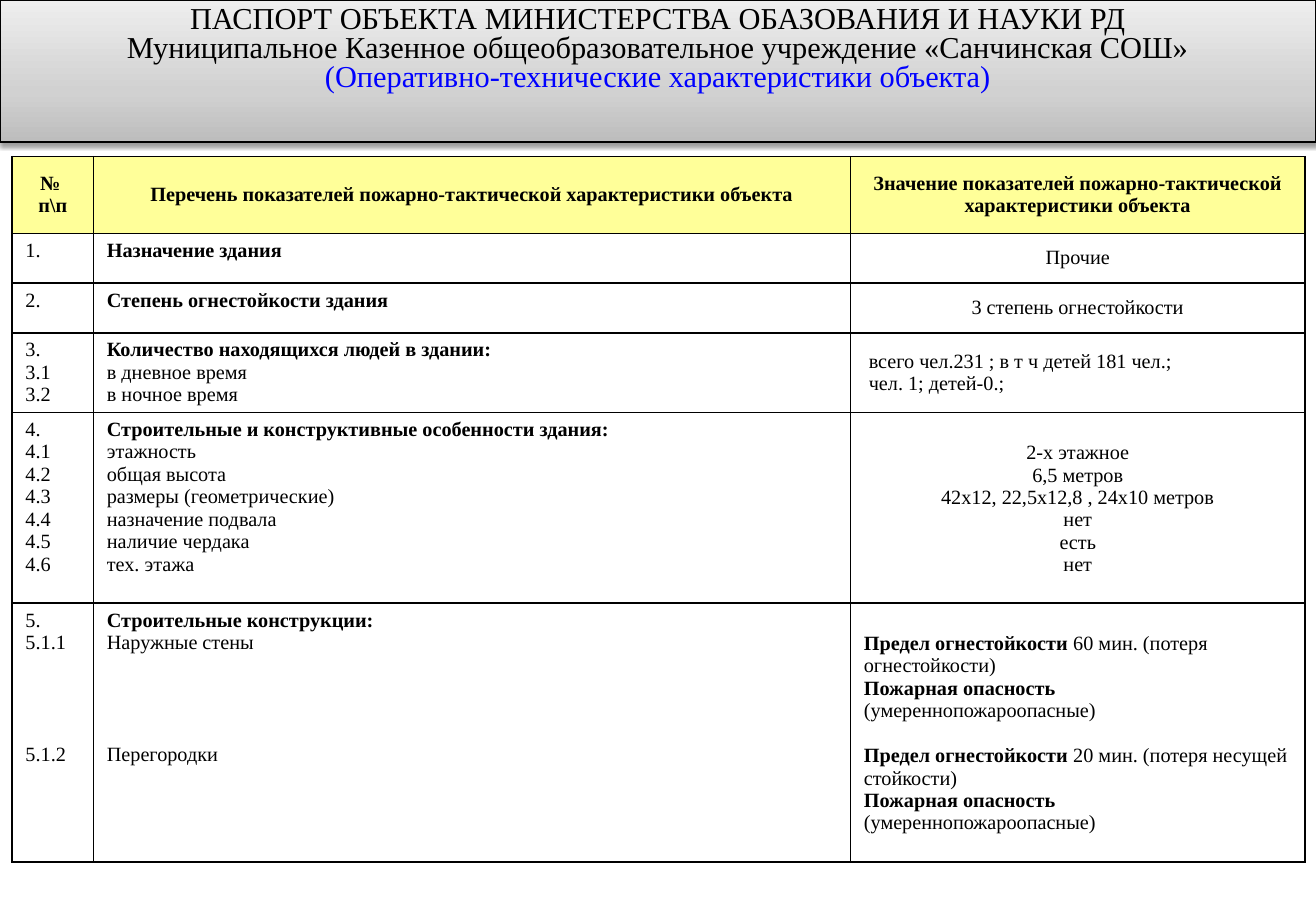
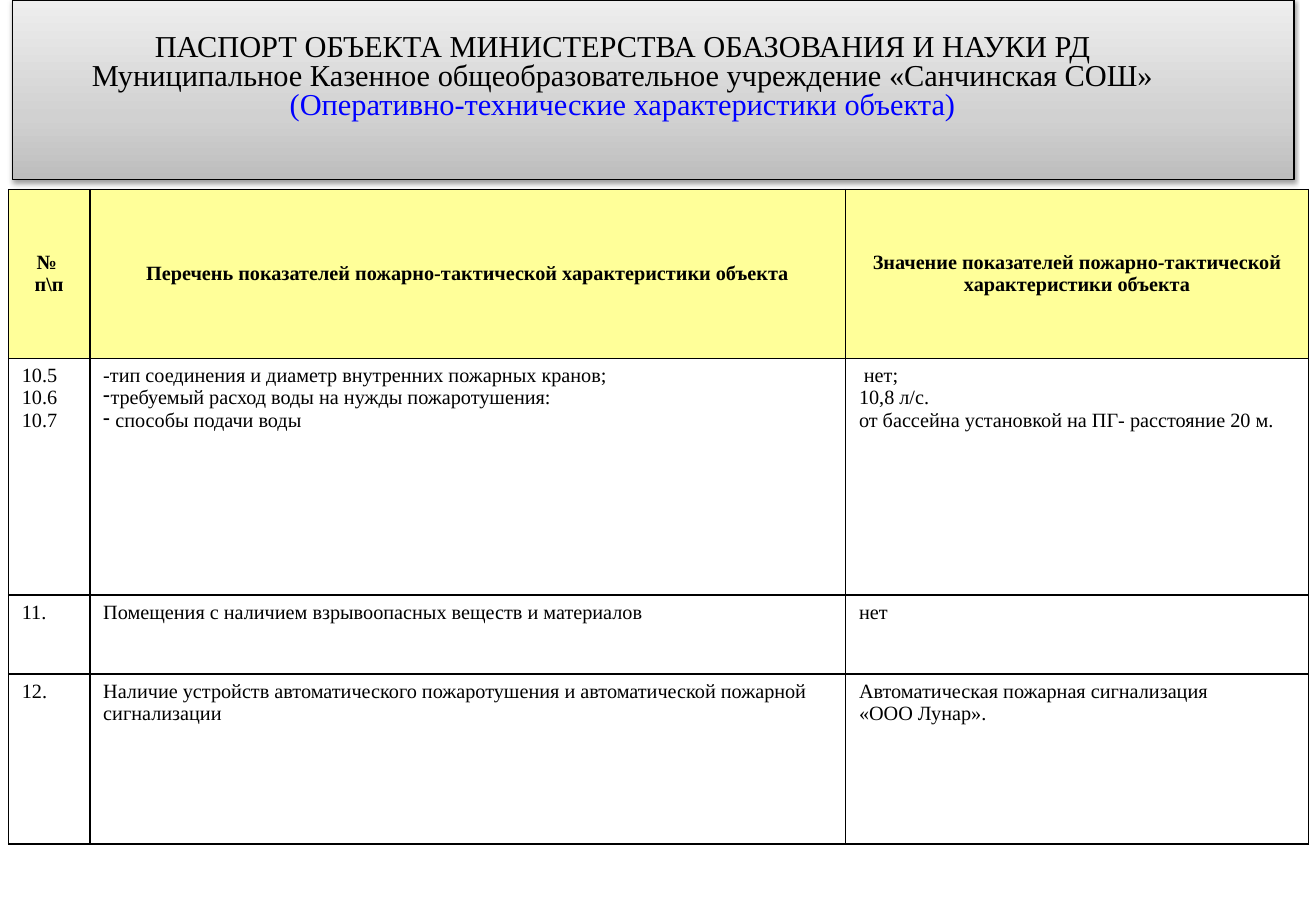
from dataclasses import dataclass

from pptx import Presentation
from pptx import util as u
from pptx.dml.color import RGBColor
from pptx.enum import shapes, text
from pptx.oxml import parse_xml
from pptx.oxml.ns import nsdecls

MID, TOP = text.MSO_ANCHOR.MIDDLE, text.MSO_ANCHOR.TOP
LEFT, CENTER = text.PP_ALIGN.LEFT, text.PP_ALIGN.CENTER
WIDE, HIGH = 108.3, 75  # grid columns and rows on a slide


@dataclass(frozen=True)
class Theme:
    font: str = "Times New Roman"
    ink: str = "000000"
    blue: str = "0000FF"
    head: str = "FFFF99"
    paper: str = "FFFFFF"
    stops: tuple = ((0, "BDBDBD"), (35, "D1D1D1"), (100, "EEEEEE"))
    big: int = 18
    small: int = 12
    line: float = 13.3  # height of one table text line, points


@dataclass
class Line:
    """One paragraph; parts between asterisks are bold."""
    words: str
    gap: int = 0  # free lines above
    pad: float = 0  # left margin, grid columns
    dash: bool = False
    color: str = Theme.ink


@dataclass
class Cell:
    lines: list
    align: int = LEFT
    anchor: int = TOP
    left: float = 1.1
    top: float = 0.5
    fill: str = Theme.paper


def grid(n):
    return u.Inches(n / 10)


class Deck:
    def __init__(self, theme):
        self.theme = theme
        self.file = Presentation()
        self.file.slide_width, self.file.slide_height = grid(WIDE), grid(HIGH)

    def page(self):
        self.slide = self.file.slides.add_slide(self.file.slide_layouts[5])

    def say(self, frame, lines, size, align, space=None):
        frame.word_wrap = True
        for i, line in enumerate(lines):
            if isinstance(line, str):
                line = Line(line)
            para = frame.paragraphs[0] if i == 0 else frame.add_paragraph()
            para.alignment = align
            if line.pad:
                props = para._p.get_or_add_pPr()
                props.set("marL", str(grid(line.pad)))
                props.set("indent", str(-grid(line.pad) if line.dash else 0))
                if line.dash:
                    props.append(parse_xml(f'<a:buChar {nsdecls("a")} char="-"/>'))
            if space:
                para.line_spacing = space
            if line.gap:
                para.space_before = u.Pt(line.gap * self.theme.line)
            for j, part in enumerate(line.words.split("*")):
                if part:
                    run = para.add_run()
                    run.text = part
                    font = run.font
                    font.name, font.size = self.theme.font, u.Pt(size)
                    font.bold = j % 2 == 1
                    font.color.rgb = RGBColor.from_string(line.color)

    def panel(self, *box):
        """Grey gradient band with a soft shadow."""
        shape = self.slide.shapes.add_shape(
            shapes.MSO_SHAPE.RECTANGLE, *map(grid, box))
        props = shape._element.spPr
        stops = "".join(
            f'<a:gs pos="{at * 1000}"><a:srgbClr val="{tone}"/></a:gs>'
            for at, tone in self.theme.stops)
        props.insert(2, parse_xml(
            f'<a:gradFill {nsdecls("a")} rotWithShape="1"><a:gsLst>{stops}'
            '</a:gsLst><a:lin ang="16200000" scaled="0"/></a:gradFill>'))
        shape.line.color.rgb = RGBColor.from_string(self.theme.ink)
        shape.line.width = u.Pt(0.75)
        props.append(parse_xml(
            f'<a:effectLst {nsdecls("a")}><a:outerShdw blurRad="{u.Pt(3.1)}" '
            f'dist="{u.Pt(1.6)}" dir="5400000" rotWithShape="0"><a:srgbClr '
            f'val="{self.theme.ink}"><a:alpha val="38000"/></a:srgbClr>'
            '</a:outerShdw></a:effectLst>'))

    def title(self, lines, *box):
        shape = self.slide.shapes.title
        shape.left, shape.top, shape.width, shape.height = map(grid, box)
        # Bring the title in front of the band
        shape._element.getparent().append(shape._element)
        frame = shape.text_frame
        frame.auto_size = text.MSO_AUTO_SIZE.NONE
        frame.vertical_anchor = TOP
        self.say(frame, lines, self.theme.big, CENTER, 0.8)

    def table(self, left, top, cols, rows, cells):
        table = self.slide.shapes.add_table(
            len(rows), len(cols), grid(left), grid(top),
            grid(sum(cols)), grid(sum(rows))).table
        table.first_row = table.horz_banding = False
        for col, wide in zip(table.columns, cols):
            col.width = grid(wide)
        for row, high, items in zip(table.rows, rows, cells):
            row.height = grid(high)
            for cell, item in zip(row.cells, items):
                self.fill(cell, item if isinstance(item, Cell) else Cell(item))

    def fill(self, cell, item):
        props = cell._tc.get_or_add_tcPr()
        for side in "LRTB":
            props.append(parse_xml(
                f'<a:ln{side} {nsdecls("a")} w="{u.Pt(1)}"><a:solidFill>'
                f'<a:srgbClr val="{self.theme.ink}"/></a:solidFill></a:ln{side}>'))
        cell.fill.solid()
        cell.fill.fore_color.rgb = RGBColor.from_string(item.fill)
        cell.margin_left, cell.margin_right = grid(item.left), grid(1.1)
        cell.margin_top, cell.margin_bottom = grid(item.top), grid(0.5)
        cell.vertical_anchor = item.anchor
        self.say(cell.text_frame, item.lines, self.theme.small, item.align)


# Shared wording
TITLE = [
    "ПАСПОРТ ОБЪЕКТА МИНИСТЕРСТВА ОБАЗОВАНИЯ И НАУКИ РД",
    "Муниципальное Казенное общеобразовательное учреждение «Санчинская СОШ»",
    Line("(Оперативно-технические характеристики объекта)", color=Theme.blue),
]
HEAD = [Cell(lines, CENTER, MID, fill=Theme.head) for lines in (
    ["*№ *", "*п\\п*"],
    ["*Перечень показателей пожарно-тактической характеристики объекта*"],
    ["*Значение показателей пожарно-тактической характеристики объекта*"])]

# Table rows of each slide
BUILD = [
    HEAD,
    [["1."], ["*Назначение здания*"], Cell(["Прочие"], CENTER, MID)],
    [["2."], ["*Степень огнестойкости здания*"],
     Cell(["3 степень огнестойкости"], CENTER, MID)],
    [["3.", "3.1", "3.2"],
     ["*Количество находящихся людей в здании:*",
      "в дневное время", "в ночное время"],
     Cell(["всего чел.231 ; в т ч детей 181 чел.;", "чел. 1; детей-0.;"],
          anchor=MID, left=1.5)],
    [["4."] + [f"4.{n}" for n in range(1, 7)],
     ["*Строительные и конструктивные особенности здания:*",
      "этажность", "общая высота", "размеры (геометрические)",
      "назначение подвала", "наличие чердака", "тех. этажа"],
     Cell(["2-х этажное", "6,5 метров", "42х12, 22,5х12,8 , 24х10 метров",
           "нет", "есть", "нет"], CENTER, top=2.4)],
    [["5.", "5.1.1", Line("5.1.2", gap=4)],
     ["*Строительные конструкции:*", "Наружные стены",
      Line("Перегородки", gap=4)],
     Cell(["*Предел огнестойкости *60 мин. (потеря огнестойкости)",
           "*Пожарная опасность *(умереннопожароопасные)",
           Line("*Предел огнестойкости *20 мин. (потеря несущей стойкости)",
                gap=1),
           "*Пожарная опасность*", "(умереннопожароопасные)"], top=2.4)],
]
WATER = [
    HEAD,
    [["10.5", "10.6", "10.7"],
     ["-тип соединения и диаметр внутренних пожарных кранов;",
      Line("требуемый расход воды на нужды пожаротушения:", pad=0.6, dash=True),
      Line("способы подачи воды", pad=1, dash=True)],
     [Line("нет;", pad=0.4), "10,8 л/с.",
      "от бассейна установкой на ПГ- расстояние 20 м."]],
    [["11."], ["Помещения с наличием взрывоопасных веществ и материалов"],
     ["нет"]],
    [["12."],
     ["Наличие устройств автоматического пожаротушения и автоматической "
      "пожарной сигнализации"],
     ["Автоматическая пожарная сигнализация", "«ООО Лунар»."]],
]


def main():
    deck = Deck(Theme())

    # Building features
    deck.page()
    deck.table(1, 12.9, [6.7, 62.3, 37.4],
               [6.3, 4.1, 4.1, 6.5, 15.7, 21.3], BUILD)
    deck.panel(0, 0, WIDE, 11.7)
    deck.title(TITLE, 0, 0, WIDE, 11.3)

    # Water supply and alarms
    deck.page()
    deck.table(0.7, 15.6, [6.7, 62.2, 38.1], [13.9, 19.5, 6.5, 14], WATER)
    deck.panel(1, 0, 105.5, 14.8)
    deck.title(TITLE, 3.4, 2.3, 95.7, 11.3)

    deck.file.save("out.pptx")


if __name__ == "__main__":
    main()
